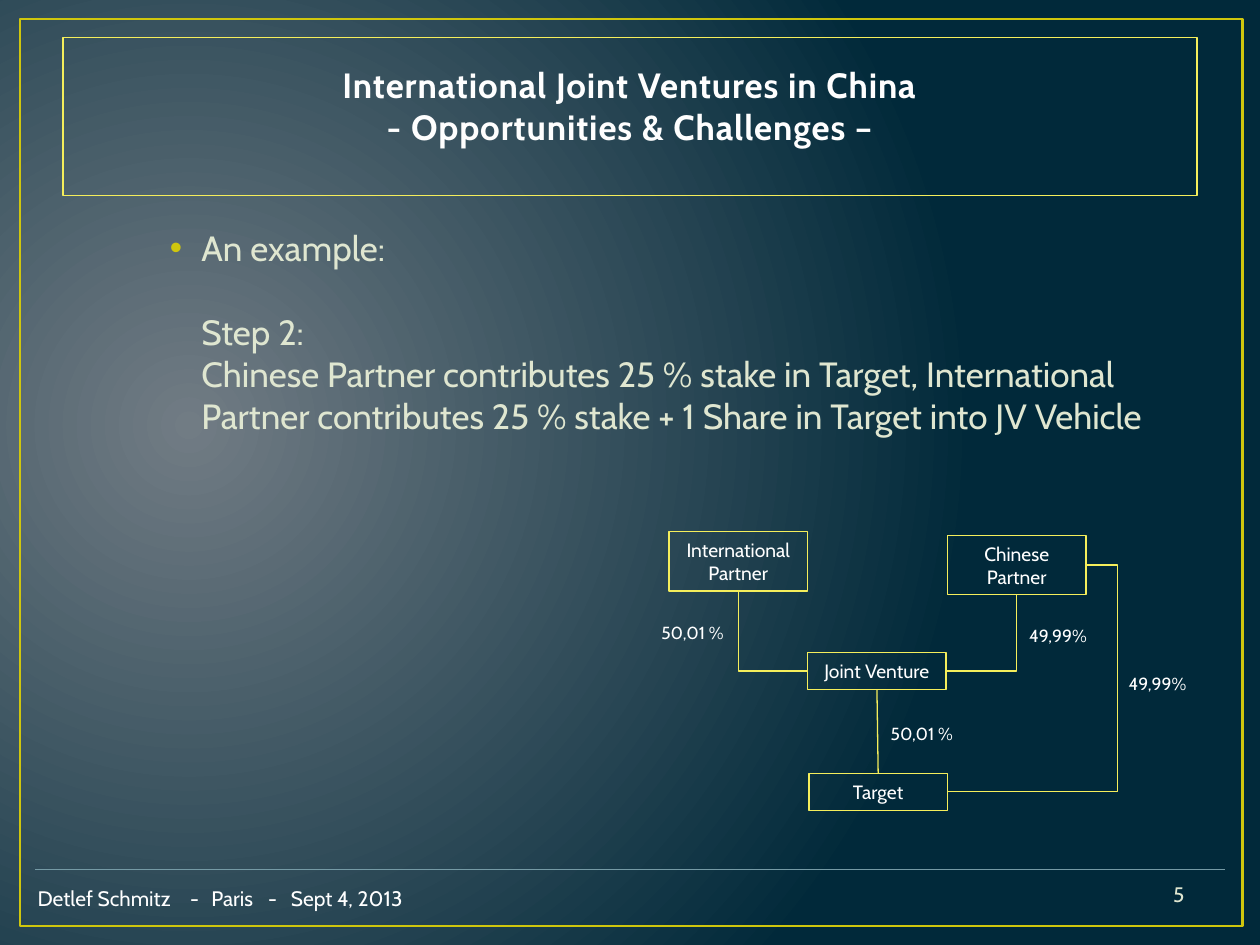
from dataclasses import dataclass

from lxml import etree
from pptx import Presentation
from pptx.dml.color import RGBColor
from pptx.enum import shapes, text
from pptx.oxml import parse_xml
from pptx.oxml.ns import nsdecls, qn
from pptx.util import Inches, Pt


@dataclass(frozen=True)
class Theme:
    font: str = "Cabin"
    glow: str = "717C84"
    night: str = "01293A"
    frame: str = "CFC60D"
    outline: str = "F5EE5B"
    rule: str = "759AA5"
    title: str = "FEFEFE"
    body: str = "DFE6D0"
    white: str = "FFFFFF"
    large: int = 20
    footer: int = 12
    box: int = 11
    label: int = 10


theme = Theme()


def write(shape, lines, size, color, align=text.PP_ALIGN.LEFT, wrap=True):
    """Fill a shape with one paragraph per line, all in one style."""
    frame = shape.text_frame
    frame.text = "\n".join(lines)
    frame.word_wrap = wrap
    for paragraph in frame.paragraphs:
        paragraph.alignment = align
        paragraph.font.name = theme.font
        paragraph.font.size = Pt(size)
        paragraph.font.color.rgb = RGBColor.from_string(color)
    return frame


def stroke(shape, color, width=0.75):
    """Draw a plain outline without shadow on a shape or connector."""
    shape.line.color.rgb = RGBColor.from_string(color)
    shape.line.width = Pt(width)
    etree.SubElement(shape.element.spPr, qn("a:effectLst"))


prs = Presentation()
prs.slide_width, prs.slide_height = Inches(10), Inches(7.5)
slide = prs.slides.add_slide(prs.slide_layouts[5])
canvas = slide.shapes

# Background: circular glow left of centre
slide.element.cSld.insert(0, parse_xml(
    f'<p:bg {nsdecls("p", "a")}><p:bgPr><a:gradFill rotWithShape="1"><a:gsLst>'
    f'<a:gs pos="0"><a:srgbClr val="{theme.glow}"/></a:gs>'
    f'<a:gs pos="100000"><a:srgbClr val="{theme.night}"/></a:gs></a:gsLst>'
    '<a:path path="circle"><a:fillToRect l="15000" t="50000" r="85000" b="60000"/></a:path>'
    '</a:gradFill><a:effectLst/></p:bgPr></p:bg>'))

border = canvas.add_shape(shapes.MSO_SHAPE.RECTANGLE,
                          Inches(0.16), Inches(0.15), Inches(9.7), Inches(7.2))
border.fill.background()
stroke(border, theme.frame, 1.5)

# Title
title = canvas.title
title.left, title.top, title.width, title.height = (
    Inches(0.5), Inches(0.3), Inches(9), Inches(1.25))
stroke(title, theme.outline)
heading = write(title, ["International Joint Ventures in China\v- Opportunities & Challenges –"],
                theme.large, theme.title, text.PP_ALIGN.CENTER)
heading.auto_size = text.MSO_AUTO_SIZE.NONE
heading.vertical_anchor = text.MSO_ANCHOR.BOTTOM
heading.margin_bottom = Inches(0.38)
heading.paragraphs[0].font.bold = True
for run in heading.paragraphs[0].runs:
    run.font.bold = True
    run.font.element.set("spc", "50") if hasattr(run.font, "element") else \
        run._r.get_or_add_rPr().set("spc", "50")

# Example text
example = canvas.add_textbox(Inches(0.5), Inches(1.75), Inches(9), Inches(4.95))
intro, step = write(example, [
    "An example:",
    "Step 2:\vChinese Partner contributes 25 % stake in Target, International Partner "
    "contributes 25 % stake + 1 Share in Target into JV Vehicle",
], theme.large, theme.body).paragraphs
intro.space_before, step.space_before = Pt(4), Pt(24)
for paragraph, indent in ((intro, -0.25), (step, 0)):
    properties = paragraph._p.get_or_add_pPr()
    properties.set("marL", str(Inches(1)))
    properties.set("indent", str(Inches(indent)))
bullet_properties = intro._p.get_or_add_pPr()
bullet_xml = (
    f'<a:buClr {nsdecls("a")}><a:srgbClr val="{theme.frame}"/></a:buClr>',
    f'<a:buFont {nsdecls("a")} typeface="Arial"/>',
    f'<a:buChar {nsdecls("a")} char="•"/>',
)
defaults = bullet_properties.find(qn("a:defRPr"))
for xml in bullet_xml:
    defaults.addprevious(parse_xml(xml))

# Footer
number = canvas.add_textbox(Inches(7.17), Inches(6.9), Inches(2.33), Inches(0.4))
write(number, ["5"], theme.footer, theme.body,
      text.PP_ALIGN.RIGHT).vertical_anchor = text.MSO_ANCHOR.MIDDLE
divider = canvas.add_connector(shapes.MSO_CONNECTOR.STRAIGHT,
                               Inches(0.28), Inches(6.9), Inches(9.72), Inches(6.9))
stroke(divider, theme.rule)
credit = canvas.add_textbox(Inches(0.2), Inches(6.98), Inches(3.35), Inches(0.3))
credit_line = write(credit, ["Detlef Schmitz\t-\tParis\t-\tSept 4, 2013"],
                    theme.footer, theme.white).paragraphs[0]
tabs = parse_xml(f'<a:tabLst {nsdecls("a")}/>')
for stop in (1.21, 1.38, 1.83, 2.01):
    etree.SubElement(tabs, qn("a:tab"), pos=str(Inches(stop)), algn="l")
credit_line._p.get_or_add_pPr().find(qn("a:defRPr")).addprevious(tabs)

# Companies
companies = {}
for name, left, top, height in (
    ("International Partner", 5.31, 4.22, 0.47),
    ("Chinese Partner", 7.52, 4.25, 0.47),
    ("Joint Venture", 6.41, 5.18, 0.29),
    ("Target", 6.42, 6.14, 0.29),
):
    company = canvas.add_shape(shapes.MSO_SHAPE.RECTANGLE,
                               Inches(left), Inches(top), Inches(1.1), Inches(height))
    company.fill.background()
    stroke(company, theme.outline)
    write(company, [name], theme.box, theme.white, text.PP_ALIGN.CENTER)
    companies[name] = company

# Holdings: connection sites run top, left, bottom, right
TOP, LEFT, BOTTOM, RIGHT = range(4)
for owned, owned_site, owner, owner_site, preset in (
    ("Joint Venture", LEFT, "International Partner", BOTTOM, "bentConnector2"),
    ("Joint Venture", RIGHT, "Chinese Partner", BOTTOM, "bentConnector2"),
    ("Target", TOP, "Joint Venture", BOTTOM, "line"),
    ("Target", RIGHT, "Chinese Partner", RIGHT, "bentConnector3"),
):
    holding = canvas.add_connector(shapes.MSO_CONNECTOR.ELBOW, 0, 0, 0, 0)
    holding.begin_connect(companies[owned], owned_site)
    holding.end_connect(companies[owner], owner_site)
    geometry = holding.element.spPr.find(qn("a:prstGeom"))
    geometry.set("prst", preset)
    if preset == "bentConnector3":
        etree.SubElement(geometry.find(qn("a:avLst")), qn("a:gd"),
                         name="adj1", fmla="val 122700")
    stroke(holding, theme.outline)

for share, left, top, width in (
    ("50,01 %", 5.15, 4.89, 0.71),
    ("49,99%", 8.07, 4.91, 0.67),
    ("50,01 %", 6.97, 5.69, 0.71),
    ("49,99%", 8.86, 5.29, 0.67),
):
    label = canvas.add_textbox(Inches(left), Inches(top), Inches(width), Inches(0.27))
    write(label, [share], theme.label, theme.white, wrap=False)

prs.save("out.pptx")
